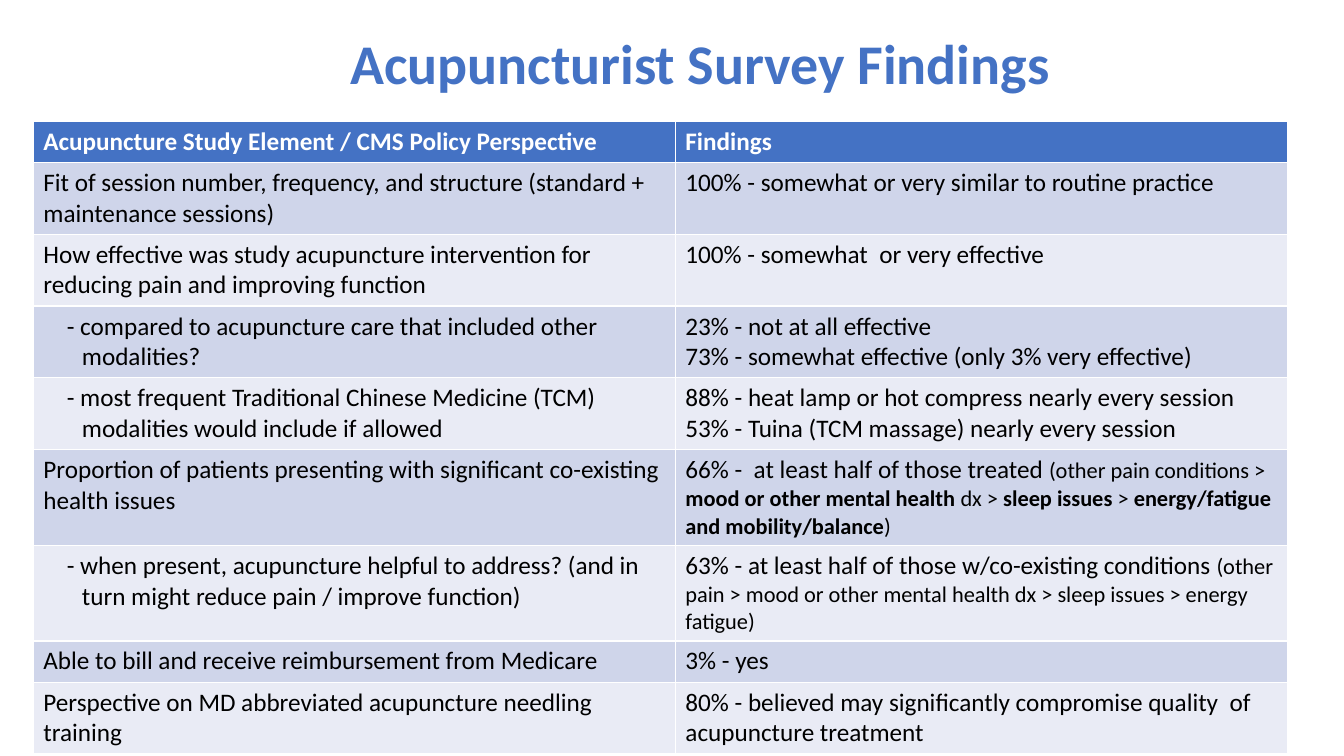
from pptx import Presentation
from pptx.dml.color import RGBColor
from pptx.enum import text
from pptx.util import Cm, Pt

BLUE = RGBColor(0x44, 0x72, 0xC4)
WHITE = RGBColor(0xFF, 0xFF, 0xFF)
BLACK = RGBColor(0, 0, 0)
BANDS = (RGBColor(0xE9, 0xEB, 0xF5), RGBColor(0xCF, 0xD5, 0xEA))

FONT = "Calibri"
TITLE = "Acupuncturist Survey Findings "
COLUMN_WIDTHS = (16.18, 15.42)
LINES_TO_HEIGHT = {1: 1.04, 2: 1.81, 3: 2.41}
MAIN, DETAIL = 18, 16

# Each row: line count, element, findings as paragraphs of (text, size, bold) runs.
ROWS = [
    (1, "Acupuncture Study Element / CMS Policy Perspective",
     [[("Findings", MAIN, True)]]),
    (2, "Fit of session number, frequency, and structure (standard + maintenance sessions)",
     [[("100% - somewhat or very similar to routine practice", MAIN, False)]]),
    (2, "How effective was study acupuncture intervention for reducing pain and improving function",
     [[("100% - somewhat  or very effective", MAIN, False)]]),
    (2, "- compared to acupuncture care that included other modalities?",
     [[("23% - not at all effective", MAIN, False)],
      [("73% - somewhat effective (only 3% very effective)", MAIN, False)]]),
    (2, "- most frequent Traditional Chinese Medicine (TCM) modalities would include if allowed",
     [[("88% - heat lamp or hot compress nearly every session", MAIN, False)],
      [("53% - Tuina (TCM massage) nearly every session", MAIN, False)]]),
    (3, "Proportion of patients presenting with significant co-existing health issues",
     [[("66% -  at least half of those treated ", MAIN, False),
       ("(other pain conditions > ", DETAIL, False),
       ("mood or other mental health ", DETAIL, True),
       ("dx > ", DETAIL, False),
       ("sleep issues ", DETAIL, True),
       ("> ", DETAIL, False),
       ("energy/fatigue and mobility/balance", DETAIL, True),
       (")", DETAIL, False)]]),
    (3, "- when present, acupuncture helpful to address? (and in turn might reduce pain / improve function)",
     [[("63% - at least half of those w/co-existing conditions ", MAIN, False),
       ("(other pain > mood or other mental health dx > sleep issues > energy fatigue)",
        DETAIL, False)]]),
    (1, "Able to bill and receive reimbursement from Medicare",
     [[("3% - yes", MAIN, False)]]),
    (2, "Perspective on MD abbreviated acupuncture needling training",
     [[("80% - believed may significantly compromise quality  of acupuncture treatment",
        MAIN, False)]]),
]


def set_font(font, size, bold, color):
    font.name, font.size, font.bold = FONT, Pt(size), bold
    font.color.rgb = color


def fill_cell(cell, paragraphs, fill, color):
    cell.fill.solid()
    cell.fill.fore_color.rgb = fill
    for index, runs in enumerate(paragraphs):
        frame = cell.text_frame
        paragraph = frame.add_paragraph() if index else frame.paragraphs[0]
        if runs[0][0].startswith("- "):
            properties = paragraph._p.get_or_add_pPr()
            properties.set("marL", str(Cm(0.97)))
            properties.set("indent", str(Cm(-0.38)))
        for words, size, bold in runs:
            run = paragraph.add_run()
            run.text = words
            if len(runs) > 1:
                set_font(run.font, size, bold, color)
        if len(runs) == 1:
            set_font(paragraph.font, *runs[0][1:], color)


def main():
    """Build the acupuncturist survey findings slide."""
    deck = Presentation()
    deck.slide_width, deck.slide_height = Cm(33.87), Cm(19.05)
    slide = deck.slides.add_slide(deck.slide_layouts[5])

    title = slide.shapes.title
    title.left, title.top, title.width, title.height = Cm(3.2), Cm(-0.36), Cm(29.21), Cm(4.04)
    title.text_frame.text = TITLE
    title.text_frame.vertical_anchor = text.MSO_ANCHOR.MIDDLE
    heading = title.text_frame.paragraphs[0]
    heading.alignment = text.PP_ALIGN.CENTER
    heading.line_spacing = 0.9
    set_font(heading.font, 40, True, BLUE)

    heights = [LINES_TO_HEIGHT[lines] for lines, _, _ in ROWS]
    findings_table = slide.shapes.add_table(
        len(ROWS), len(COLUMN_WIDTHS), Cm(0.84), Cm(3.05),
        Cm(sum(COLUMN_WIDTHS)), Cm(sum(heights))).table
    for column, width in zip(findings_table.columns, COLUMN_WIDTHS):
        column.width = Cm(width)
    for number, (_, element, findings) in enumerate(ROWS):
        header = number == 0
        findings_table.rows[number].height = Cm(heights[number])
        fill, color = (BLUE, WHITE) if header else (BANDS[number % 2], BLACK)
        for column, paragraphs in enumerate(([[(element, MAIN, header)]], findings)):
            fill_cell(findings_table.cell(number, column), paragraphs, fill, color)

    deck.save("out.pptx")


if __name__ == "__main__":
    main()
